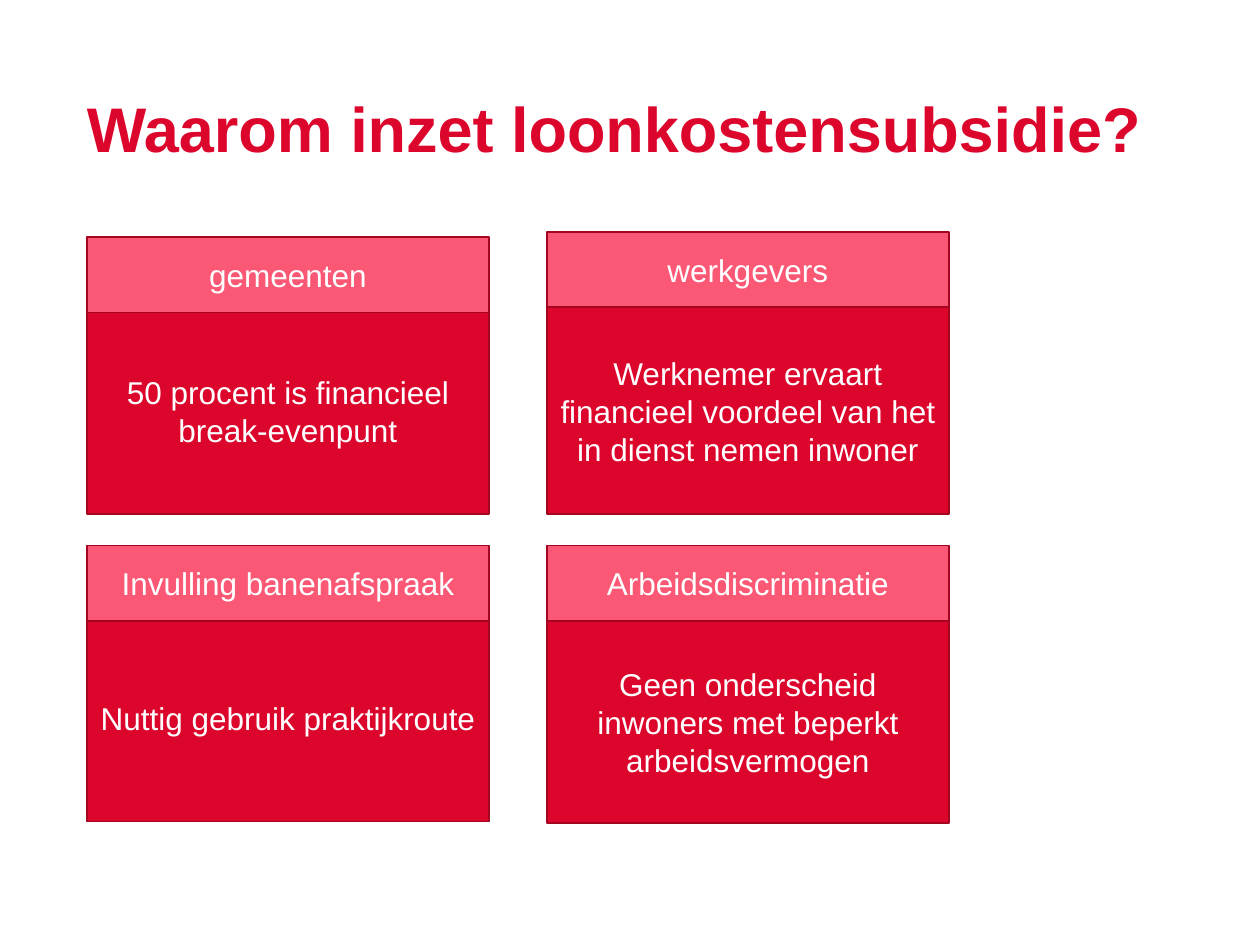
from dataclasses import dataclass

from pptx import Presentation
from pptx.dml.color import RGBColor
from pptx.enum.shapes import MSO_SHAPE as Shape
from pptx.enum.text import MSO_ANCHOR as Anchor, PP_ALIGN as Align
from pptx.util import Inches, Pt


@dataclass(frozen=True)
class Theme:
    font: str = "Arial"
    red: RGBColor = RGBColor(0xDC, 0x05, 0x2B)
    pink: RGBColor = RGBColor(0xFB, 0x58, 0x75)
    border: RGBColor = RGBColor(0xA3, 0x04, 0x20)
    white: RGBColor = RGBColor(0xFF, 0xFF, 0xFF)
    title_size: Pt = Pt(36)
    card_size: Pt = Pt(18)
    border_width: Pt = Pt(1)


THEME = Theme()
LEFT_COLUMN, RIGHT_COLUMN = 0.69, 4.34
CARD_WIDTH = 3.19
HEADER_HEIGHT = 0.6

# Column, card top, body top, body height, heading, message
CARDS = [
    (LEFT_COLUMN, 1.88, 2.44, 1.64, "gemeenten",
     "50 procent is financieel break-evenpunt"),
    (RIGHT_COLUMN, 1.84, 2.44, 1.64, "werkgevers",
     "Werknemer ervaart financieel voordeel van het in dienst nemen inwoner"),
    (LEFT_COLUMN, 4.33, 4.88, 1.64, "Invulling banenafspraak",
     "Nuttig gebruik praktijkroute"),
    (RIGHT_COLUMN, 4.33, 4.93, 1.6, "Arbeidsdiscriminatie",
     "Geen onderscheid inwoners met beperkt arbeidsvermogen"),
]


def write(frame, text, size, color, bold=False):
    """Put one styled paragraph in a text frame."""
    frame.word_wrap = True
    para = frame.paragraphs[0]
    para.text = text
    font = para.runs[0].font
    font.name, font.size, font.bold = THEME.font, size, bold
    font.color.rgb = color
    return para


def add_title(page, left, top, width, height, text):
    box = page.shapes.add_textbox(Inches(left), Inches(top), Inches(width), Inches(height))
    para = write(box.text_frame, text, THEME.title_size, THEME.red, bold=True)
    para.line_spacing = 0.9


def add_panel(page, left, top, width, height, fill, text):
    panel = page.shapes.add_shape(
        Shape.RECTANGLE, Inches(left), Inches(top), Inches(width), Inches(height))
    panel.shadow.inherit = False
    panel.fill.solid()
    panel.fill.fore_color.rgb = fill
    panel.line.color.rgb = THEME.border
    panel.line.width = THEME.border_width
    panel.text_frame.vertical_anchor = Anchor.MIDDLE
    para = write(panel.text_frame, text, THEME.card_size, THEME.white)
    para.alignment = Align.CENTER


def add_card(page, left, top, body_top, body_height, heading, message):
    """Draw the body first, so that the header overlaps its top edge."""
    add_panel(page, left, body_top, CARD_WIDTH, body_height, THEME.red, message)
    add_panel(page, left, top, CARD_WIDTH, HEADER_HEIGHT, THEME.pink, heading)


def main():
    deck = Presentation()
    deck.slide_width, deck.slide_height = Inches(10), Inches(7.5)
    page = deck.slides.add_slide(deck.slide_layouts[6])

    # Title
    add_title(page, 0.59, 0.73, 8.98, 0.73, "Waarom inzet loonkostensubsidie?")

    # Reason cards
    for card in CARDS:
        add_card(page, *card)

    deck.save("out.pptx")


if __name__ == "__main__":
    main()
